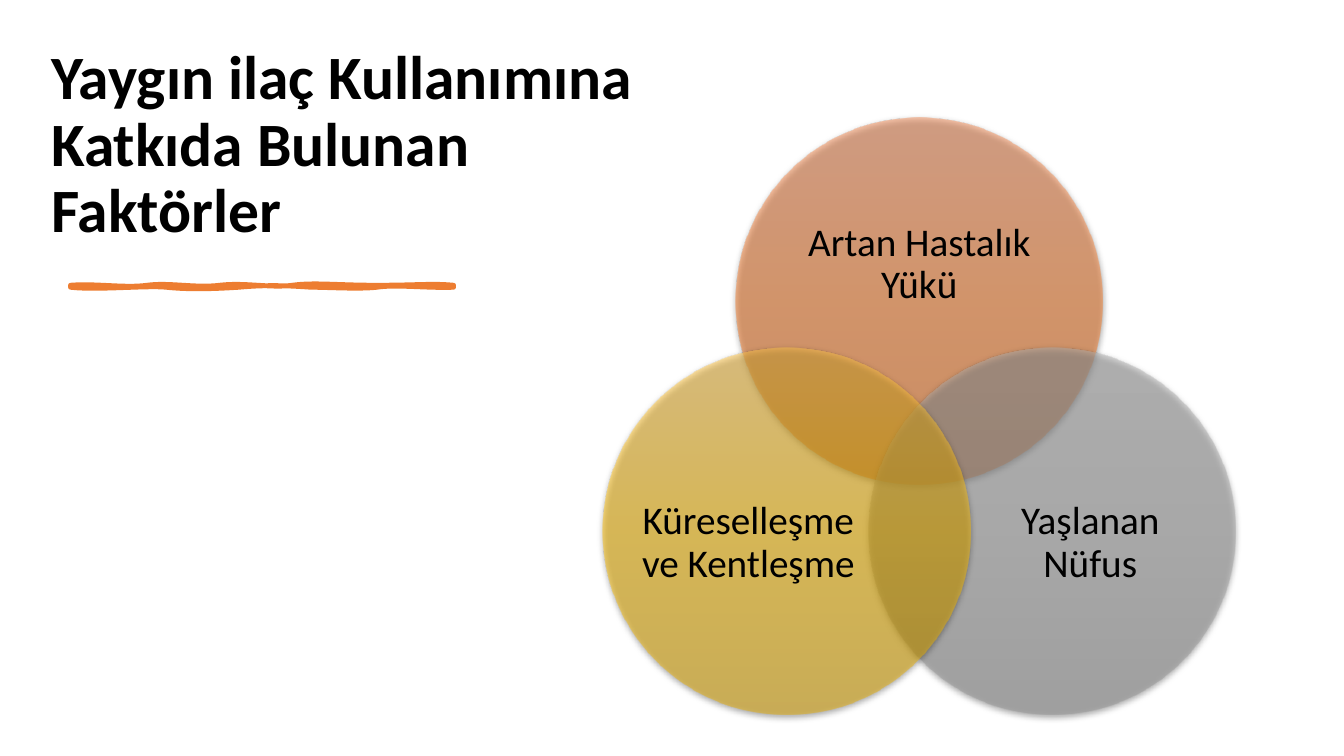
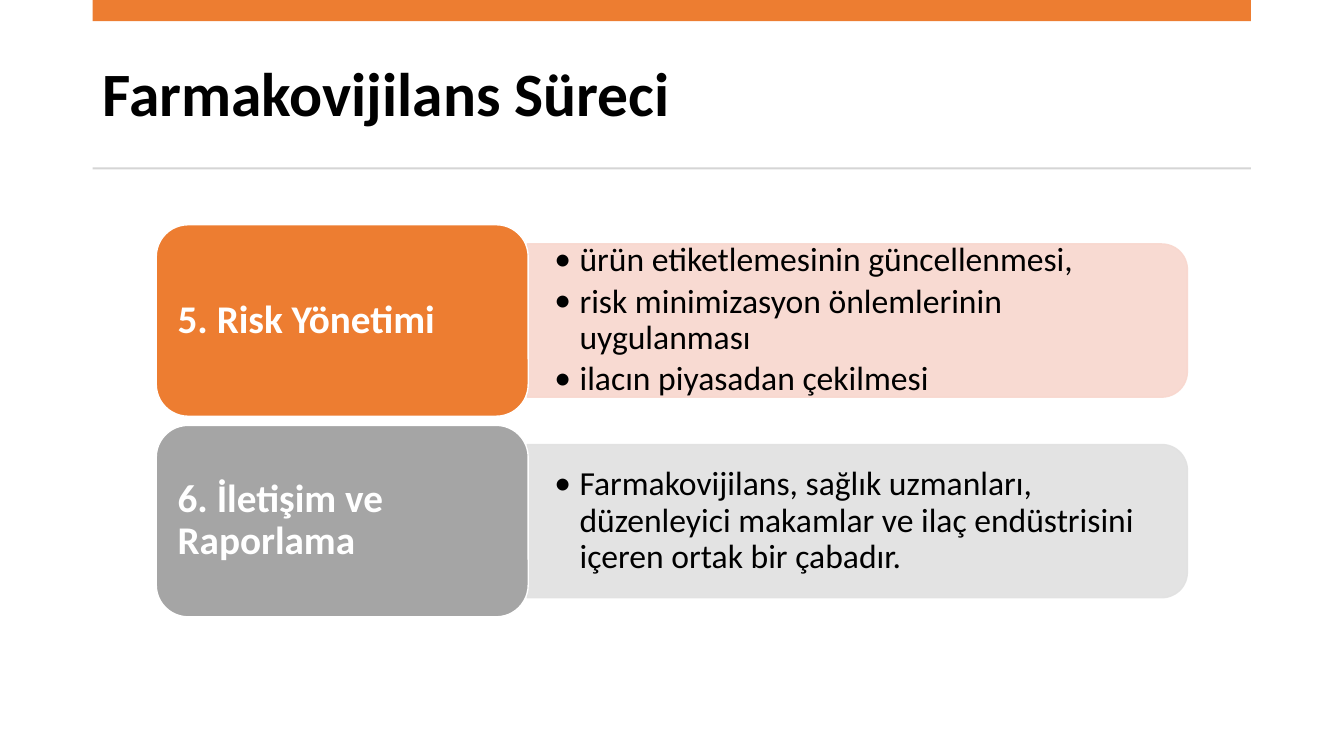
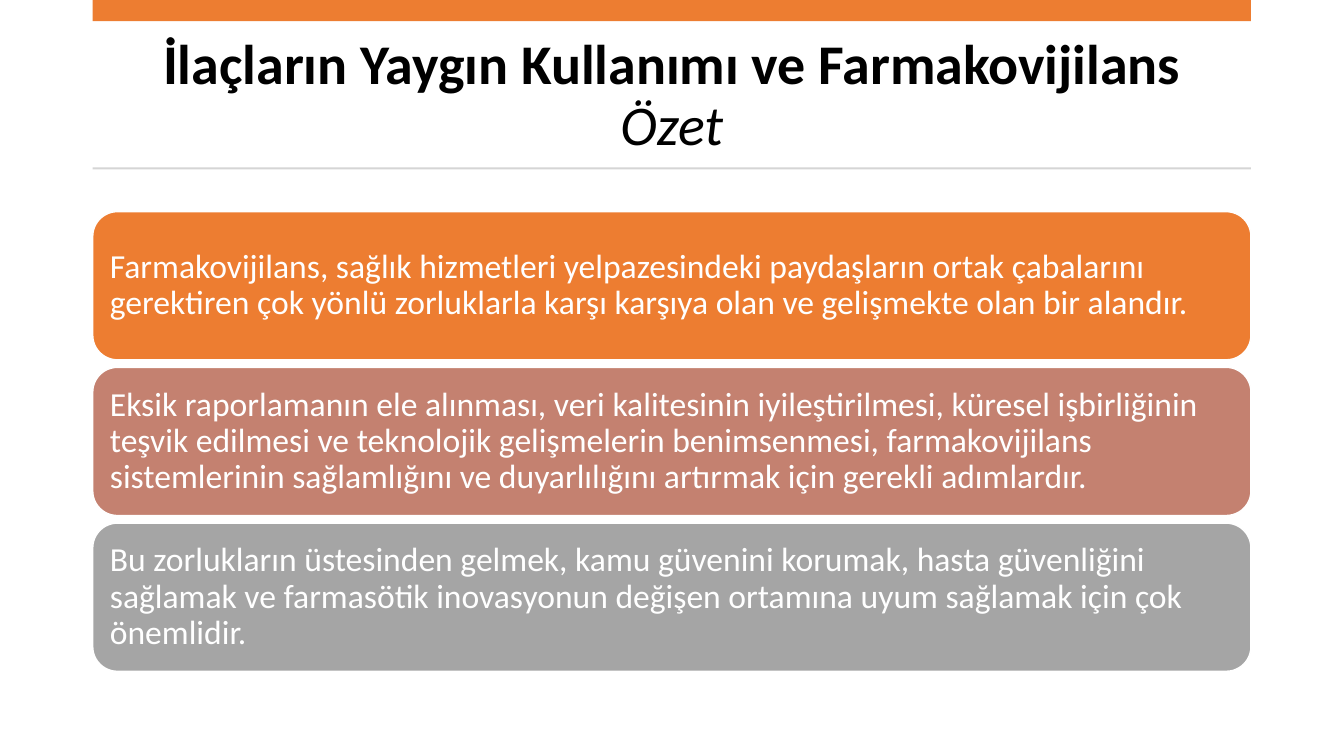
from dataclasses import dataclass
from math import cos, radians, sin

from lxml.etree import SubElement
from pptx import Presentation
from pptx.dml.color import RGBColor
from pptx.enum.shapes import MSO_SHAPE
from pptx.enum.text import MSO_ANCHOR, PP_ALIGN
from pptx.oxml.ns import qn
from pptx.util import Inches, Pt


@dataclass(frozen=True)
class Theme:
    font: str = "Calibri"
    orange: str = "ED7D31"
    gray: str = "A5A5A5"
    rose: str = "C48170"
    pale_orange: str = "F8D7CE"
    pale_gray: str = "E1E1E1"
    rule: str = "D5D5D5"
    black: str = "000000"
    white: str = "FFFFFF"
    title: int = 44
    small_title: int = 40
    label: int = 28
    body: int = 24


THEME = Theme()
MARGIN, CONTENT_WIDTH = 0.92, 11.49

FACTORS_TITLE = "Yaygın ilaç Kullanımına Katkıda Bulunan Faktörler"
# label, angle, gradient colours, label size, label offset from circle centre
FACTORS = [
    ("Artan Hastalık Yükü", -90, ("F18C57", "F67B28", "E56C19"), (2.67, 1.64), (0, -0.36)),
    ("Yaşlanan Nüfus", 30, ("AFAFAF", "A5A5A5", "939393"), (2.18, 2), (0.38, 0.12)),
    ("Küreselleşme ve Kentleşme", 150, ("FFC64B", "FFC000", "E3AB00"), (2.18, 2), (-0.38, 0.12)),
]
VENN_CENTER, VENN_SPREAD, CIRCLE = (9.12, 4.51), 1.52, 3.64

# Brush stroke: start point, then cubic segments (two controls and an end)
STROKE_START = (0.7, 2.83)
STROKE_CURVES = [
    ((0.95, 2.81), (1.24, 2.86), (1.46, 2.83)),
    ((1.68, 2.8), (1.94, 2.86), (2.18, 2.83)),
    ((2.43, 2.8), (2.69, 2.86), (2.9, 2.83)),
    ((3.12, 2.8), (3.33, 2.83), (3.74, 2.83)),
    ((4.15, 2.83), (4.29, 2.81), (4.5, 2.83)),
    ((4.5, 2.84), (4.5, 2.84), (4.5, 2.85)),
    ((4.24, 2.86), (3.92, 2.82), (3.74, 2.85)),
    ((3.56, 2.87), (3.26, 2.85), (3.09, 2.85)),
    ((2.93, 2.84), (2.69, 2.82), (2.37, 2.85)),
    ((2.06, 2.87), (1.84, 2.87), (1.65, 2.85)),
    ((1.46, 2.83), (0.96, 2.88), (0.7, 2.85)),
]

PROCESS_TITLE = "Farmakovijilans Süreci"
STEPS = [
    ("5. Risk Yönetimi", THEME.orange, THEME.pale_orange, [
        "ürün etiketlemesinin güncellenmesi,",
        "risk minimizasyon önlemlerinin uygulanması",
        "ilacın piyasadan çekilmesi",
    ]),
    ("6. İletişim ve Raporlama", THEME.gray, THEME.pale_gray, [
        "Farmakovijilans, sağlık uzmanları, düzenleyici makamlar ve ilaç "
        "endüstrisini içeren ortak bir çabadır.",
    ]),
]

SUMMARY_TITLE = [
    ("İlaçların Yaygın Kullanımı ve Farmakovijilans\n", {}),
    ("Özet", {"bold": False, "italic": True}),
]
SUMMARY = [
    ("Farmakovijilans, sağlık hizmetleri yelpazesindeki paydaşların ortak çabalarını "
     "gerektiren çok yönlü zorluklarla karşı karşıya olan ve gelişmekte olan bir alandır.",
     THEME.orange),
    ("Eksik raporlamanın ele alınması, veri kalitesinin iyileştirilmesi, küresel işbirliğinin "
     "teşvik edilmesi ve teknolojik gelişmelerin benimsenmesi, farmakovijilans sistemlerinin "
     "sağlamlığını ve duyarlılığını artırmak için gerekli adımlardır.", THEME.rose),
    ("Bu zorlukların üstesinden gelmek, kamu güvenini korumak, hasta güvenliğini sağlamak ve "
     "farmasötik inovasyonun değişen ortamına uyum sağlamak için çok önemlidir.", THEME.gray),
]


def color(value):
    return RGBColor.from_string(value)


def write_text(shape, paragraphs, size, fill=THEME.black, bold=False, align=PP_ALIGN.LEFT,
               anchor=MSO_ANCHOR.MIDDLE, insets=(0.1, 0.05), bullet=False):
    """Each paragraph is a string or a list of (text, font overrides) spans."""
    frame = shape.text_frame
    frame.word_wrap = True
    frame.vertical_anchor = anchor
    frame.margin_left = frame.margin_right = Inches(insets[0])
    frame.margin_top = frame.margin_bottom = Inches(insets[1])
    for index, content in enumerate(paragraphs):
        para = frame.add_paragraph() if index else frame.paragraphs[0]
        para.alignment = align
        para.line_spacing = 0.9
        if bullet:
            para.space_after = Pt(size * 0.15)
            properties = para._p.get_or_add_pPr()
            properties.set("marL", str(Inches(0.25)))
            properties.set("indent", str(-Inches(0.25)))
            SubElement(properties, qn("a:buFont"), typeface=THEME.font)
            SubElement(properties, qn("a:buChar"), char="•")
        for text, overrides in [(content, {})] if isinstance(content, str) else content:
            span = para.add_run()
            span.text = text.rstrip("\n")
            span.font.name = THEME.font
            span.font.size = Pt(size)
            span.font.color.rgb = color(fill)
            span.font.bold = overrides.get("bold", bold)
            span.font.italic = overrides.get("italic", False)
            if text.endswith("\n"):
                para.add_line_break()


def add_text(slide, at, paragraphs, **text_format):
    box = slide.shapes.add_textbox(*map(Inches, at))
    write_text(box, paragraphs, **text_format)


def paint(shape, fill, line=None, width=1):
    shape.shadow.inherit = False
    shape.fill.solid()
    shape.fill.fore_color.rgb = color(fill)
    if line:
        shape.line.color.rgb = color(line)
        shape.line.width = Pt(width)
    else:
        shape.line.fill.background()


def add_block(slide, kind, at, fill, line=None):
    block = slide.shapes.add_shape(kind, *map(Inches, at))
    paint(block, fill, line)
    return block


def set_alpha(shape, percent):
    for node in shape.element.spPr.iter(qn("a:srgbClr")):
        SubElement(node, qn("a:alpha"), val=str(percent * 1000))


def add_glass_circle(slide, at, stops):
    """Half-transparent circle with a vertical gradient and a soft shadow."""
    circle = add_block(slide, MSO_SHAPE.OVAL, at, stops[0])
    circle.fill.gradient()
    circle.fill.gradient_angle = 270
    properties = circle.element.spPr
    stop_list = properties.find(qn("a:gradFill")).find(qn("a:gsLst"))
    for stop in list(stop_list):
        stop_list.remove(stop)
    for position, value in zip((0, 50000, 100000), stops):
        stop = SubElement(stop_list, qn("a:gs"), pos=str(position))
        SubElement(stop, qn("a:srgbClr"), val=value)
    set_alpha(circle, 50)
    shadow = SubElement(properties.find(qn("a:effectLst")), qn("a:outerShdw"),
                        blurRad=str(Pt(4.5)), dist=str(Pt(1.5)), dir="5400000",
                        algn="ctr", rotWithShape="0")
    shade = SubElement(shadow, qn("a:srgbClr"), val=THEME.black)
    SubElement(shade, qn("a:alpha"), val="63000")


def add_brush_stroke(slide):
    """Outline whose straight segments are regrouped, three by three, into curves."""
    builder = slide.shapes.build_freeform(*map(Inches, STROKE_START))
    builder.add_line_segments(
        [tuple(map(Inches, point)) for curve in STROKE_CURVES for point in curve], close=True)
    stroke = builder.convert_to_shape()
    paint(stroke, THEME.orange, THEME.orange, 3.5)
    segments = list(stroke.element.spPr.iter(qn("a:lnTo")))
    for first in range(0, len(segments), 3):
        curve = SubElement(segments[first].getparent(), qn("a:cubicBezTo"))
        segments[first].addprevious(curve)
        for segment in segments[first:first + 3]:
            curve.append(segment[0])
            segment.getparent().remove(segment)


def add_banded_slide(deck, title, **title_format):
    slide = deck.slides.add_slide(deck.slide_layouts[6])
    add_text(slide, (MARGIN, 0.37, CONTENT_WIDTH, 1.18), [title], bold=True, **title_format)
    for top, height, fill in ((0, 0.21, THEME.orange), (1.66, 0.02, THEME.rule)):
        add_block(slide, MSO_SHAPE.RECTANGLE, (MARGIN, top, CONTENT_WIDTH, height), fill)
    return slide


def build_factors(deck):
    slide = deck.slides.add_slide(deck.slide_layouts[6])
    add_text(slide, (0.41, 0.35, 6.7, 2.14), [FACTORS_TITLE], size=THEME.title, bold=True,
             anchor=MSO_ANCHOR.BOTTOM)
    add_brush_stroke(slide)
    for label, angle, stops, (width, height), (shift_x, shift_y) in FACTORS:
        x = VENN_CENTER[0] + VENN_SPREAD * cos(radians(angle))
        y = VENN_CENTER[1] + VENN_SPREAD * sin(radians(angle))
        add_glass_circle(slide, (x - CIRCLE / 2, y - CIRCLE / 2, CIRCLE, CIRCLE), stops)
        add_text(slide, (x + shift_x - width / 2, y + shift_y - height / 2, width, height),
                 [label], size=THEME.label, align=PP_ALIGN.CENTER, insets=(0, 0))


def build_process(deck):
    slide = add_banded_slide(deck, PROCESS_TITLE, size=THEME.title)
    left, label_width, label_height, pitch = 1.55, 3.69, 1.9, 1.99
    panel_left, panel_width, panel_height, text_height = 5.23, 6.55, 1.52, 1.37
    for index, (label, fill, pale, points) in enumerate(STEPS):
        top = 2.23 + index * pitch
        middle = top + label_height / 2
        # The panel is drawn upright and turned so its round corners face right
        panel = add_block(slide, MSO_SHAPE.ROUND_2_SAME_RECTANGLE,
                          (panel_left + (panel_width - panel_height) / 2,
                           middle - panel_width / 2, panel_height, panel_width), pale, pale)
        panel.rotation = 90
        set_alpha(panel, 90)
        add_text(slide, (panel_left, middle - text_height / 2, 6.48, text_height), points,
                 size=THEME.body, insets=(0.27, 0.14), bullet=True)
        block = add_block(slide, MSO_SHAPE.ROUNDED_RECTANGLE,
                          (left, top, label_width, label_height), fill, THEME.white)
        write_text(block, [label], size=THEME.label, fill=THEME.white, bold=True,
                   insets=(0.12, 0.06))


def build_summary(deck):
    slide = add_banded_slide(deck, SUMMARY_TITLE, size=THEME.small_title,
                             align=PP_ALIGN.CENTER)
    first_top, last_top, height = 2.1, 5.19, 1.47
    pitch = (last_top - first_top) / (len(SUMMARY) - 1)
    for index, (text, fill) in enumerate(SUMMARY):
        block = add_block(slide, MSO_SHAPE.ROUNDED_RECTANGLE,
                          (MARGIN, first_top + index * pitch, CONTENT_WIDTH, height),
                          fill, THEME.white)
        write_text(block, [text], size=THEME.body, fill=THEME.white, insets=(0.1, 0.1))


def main():
    deck = Presentation()
    deck.slide_width, deck.slide_height = Inches(40 / 3), Inches(7.5)
    build_factors(deck)
    build_process(deck)
    build_summary(deck)
    deck.save("out.pptx")


if __name__ == "__main__":
    main()
